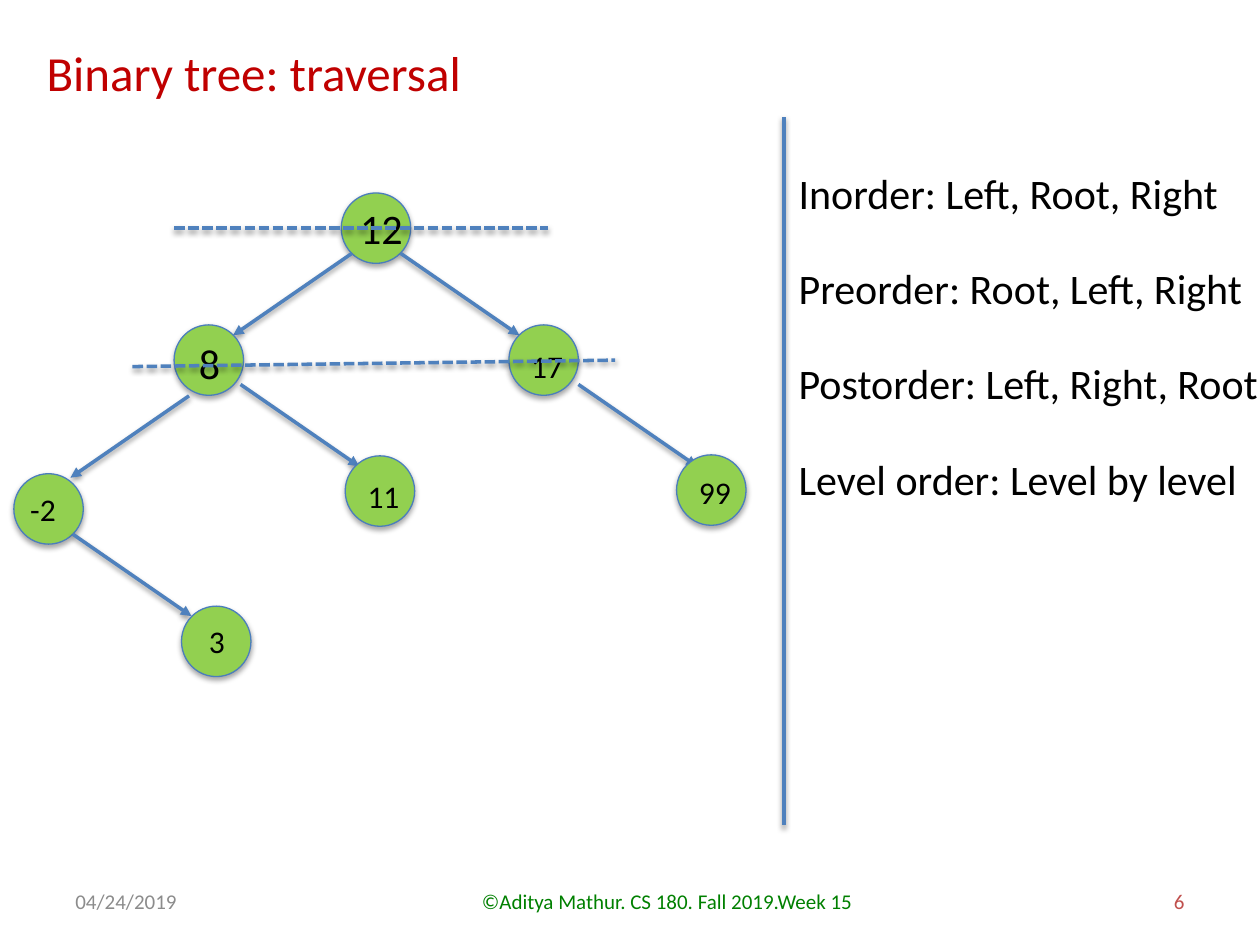
from dataclasses import dataclass

from lxml import etree
from pptx import Presentation
from pptx.dml.color import RGBColor
from pptx.enum.dml import MSO_LINE
from pptx.enum.shapes import MSO_CONNECTOR, MSO_SHAPE
from pptx.enum.text import MSO_ANCHOR, MSO_AUTO_SIZE, PP_ALIGN
from pptx.oxml.ns import qn
from pptx.util import Cm, Pt

STRAIGHT = MSO_CONNECTOR.STRAIGHT
OVAL = MSO_SHAPE.OVAL
DASHED = MSO_LINE.SQUARE_DOT
LEFT, CENTER, RIGHT = PP_ALIGN.LEFT, PP_ALIGN.CENTER, PP_ALIGN.RIGHT
MIDDLE, TOP = MSO_ANCHOR.MIDDLE, MSO_ANCHOR.TOP
FIT_SHAPE = MSO_AUTO_SIZE.SHAPE_TO_FIT_TEXT

FONT = "Calibri"
BLACK = RGBColor(0x00, 0x00, 0x00)
RED = RGBColor(0xC0, 0x00, 0x00)
GRAY = RGBColor(0x8C, 0x8C, 0x8C)
DARK_GREEN = RGBColor(0x00, 0x80, 0x00)
PAGE_RED = RGBColor(0xC0, 0x50, 0x4D)
NODE_GREEN = RGBColor(0x92, 0xD0, 0x50)
NODE_BORDER = RGBColor(0x4B, 0x7E, 0xBC)
LINE_BLUE = RGBColor(0x4F, 0x81, 0xBD)

# Sizes in centimetres
NODE_WIDTH, NODE_HEIGHT = 1.4, 1.42
EDGE_RUN, EDGE_DROP = 2.39, 1.65
ORDER_LEFT, ORDER_TOP, ORDER_STEP = 15.85, 3.25, 1.92
FOOTER_TOP, FOOTER_HEIGHT = 17.65, 1.02


@dataclass
class Node:
    label: str
    place: tuple        # left, top of the circle
    label_box: tuple    # left, top, width of the label
    size: int = 18
    edge_start: tuple = ()  # where the arrow from the parent begins
    side: int = 0           # -1 left child, 1 right child


NODES = [
    Node("12", (6.88, 3.89), (7.01, 3.96, 1.37), 24),
    Node("8", (3.51, 6.55), (3.76, 6.68, 0.94), 24, (7.09, 5.11), -1),
    Node("-2", (0.28, 9.55), (0.36, 9.75, 1.04), 18, (3.81, 7.98), -1),
    Node("11", (6.96, 9.19), (7.16, 9.5, 1.17), 18, (4.85, 7.75), 1),
    Node("17", (10.26, 6.55), (10.46, 6.88, 1.17), 18, (8.08, 5.11), 1),
    Node("99", (13.64, 9.17), (13.84, 9.42, 1.17), 18, (11.66, 7.75), 1),
    Node("3", (3.66, 12.22), (3.96, 12.42, 0.84), 18, (1.47, 10.77), 1),
]

ORDERS = [
    ("Inorder: Left, Root, Right", 9.25),
    ("Preorder: Root, Left, Right", 9.75),
    ("Postorder: Left, Right, Root", 10.06),
    ("Level order: Level by level", 9.45),
]

FOOTERS = [
    ("04/24/2019", 1.27, 5.92, GRAY, LEFT),
    ("©Aditya Mathur. CS 180. Fall 2019.Week 15", 8.69, 9.52, DARK_GREEN, CENTER),
    ("6", 18.21, 5.92, PAGE_RED, RIGHT),
]


def add_shadow(shape, distance, opacity):
    """Give a shape or connector a soft shadow straight below it."""
    effects = etree.SubElement(shape._element.spPr, qn("a:effectLst"))
    shadow = etree.SubElement(
        effects, qn("a:outerShdw"), blurRad=str(Pt(3.1)), dist=str(Pt(distance)),
        dir="5400000", rotWithShape="0")
    color = etree.SubElement(shadow, qn("a:srgbClr"), val=str(BLACK))
    etree.SubElement(color, qn("a:alpha"), val=str(opacity * 1000))


def add_text(page, text, left, top, width, height, size, color=BLACK,
             wrap=False, align=LEFT, anchor=TOP):
    box = page.shapes.add_textbox(Cm(left), Cm(top), Cm(width), Cm(height))
    frame = box.text_frame
    frame.text = text
    frame.word_wrap = wrap
    frame.vertical_anchor = anchor
    if anchor == TOP:
        frame.auto_size = FIT_SHAPE
    para = frame.paragraphs[0]
    para.alignment = align
    font = para.runs[0].font
    font.name, font.size = FONT, Pt(size)
    font.color.rgb = color


def add_line(page, start, end, dash=None, arrow=False):
    line = page.shapes.add_connector(
        STRAIGHT, Cm(start[0]), Cm(start[1]), Cm(end[0]), Cm(end[1]))
    line.line.color.rgb = LINE_BLUE
    line.line.width = Pt(2)
    if dash:
        line.line.dash_style = dash
    if arrow:
        etree.SubElement(line.line._get_or_add_ln(), qn("a:tailEnd"), type="triangle")
    add_shadow(line, 1.6, 38)


def add_node(page, node):
    # Arrow from the parent
    if node.side:
        x, y = node.edge_start
        add_line(page, (x, y), (x + node.side * EDGE_RUN, y + EDGE_DROP), arrow=True)
    # Circle
    left, top = node.place
    circle = page.shapes.add_shape(
        OVAL, Cm(left), Cm(top), Cm(NODE_WIDTH), Cm(NODE_HEIGHT))
    circle.fill.solid()
    circle.fill.fore_color.rgb = NODE_GREEN
    circle.line.color.rgb = NODE_BORDER
    circle.line.width = Pt(0.75)
    add_shadow(circle, 1.8, 35)
    # Label
    height = 1.27 if node.size == 24 else 1.02
    add_text(page, node.label, *node.label_box, height, node.size)


def main():
    deck = Presentation()
    deck.slide_width, deck.slide_height = Cm(25.4), Cm(19.05)
    page = deck.slides.add_slide(deck.slide_layouts[6])

    # Footer and title
    for text, left, width, color, align in FOOTERS:
        add_text(page, text, left, FOOTER_TOP, width, FOOTER_HEIGHT, 12, color,
                 wrap=True, align=align, anchor=MIDDLE)
    add_text(page, "Binary tree: traversal", 0.69, 0.74, 12.75, 1.45, 28, RED, wrap=True)

    # Tree
    for node in NODES:
        add_node(page, node)

    # Divider and traversal orders
    add_line(page, (15.8, 2.36), (15.8, 16.64))
    for row, (text, width) in enumerate(ORDERS):
        add_text(page, text, ORDER_LEFT, ORDER_TOP + row * ORDER_STEP, width, 1.27, 24)

    # Level markers
    add_line(page, (3.51, 4.6), (11.05, 4.6), dash=DASHED)
    add_line(page, (2.67, 7.39), (12.4, 7.26), dash=DASHED)

    deck.save("out.pptx")


if __name__ == "__main__":
    main()
